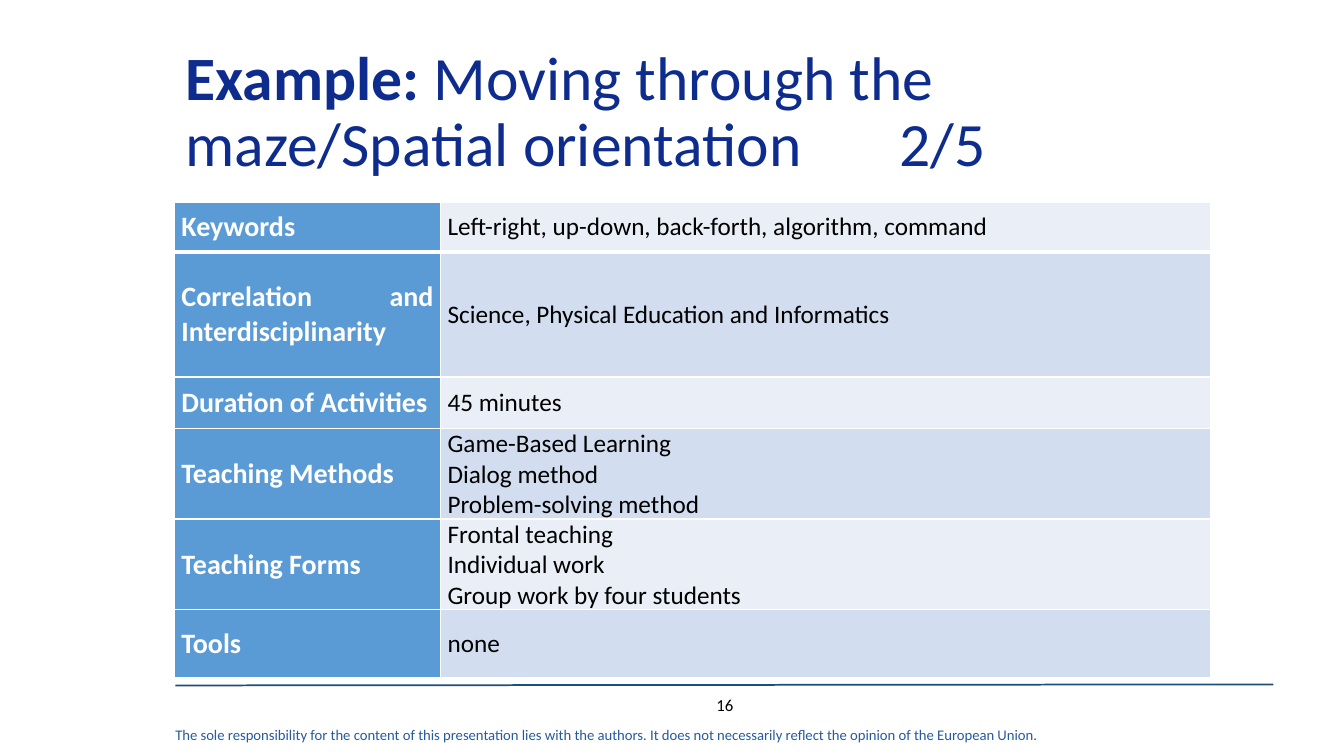
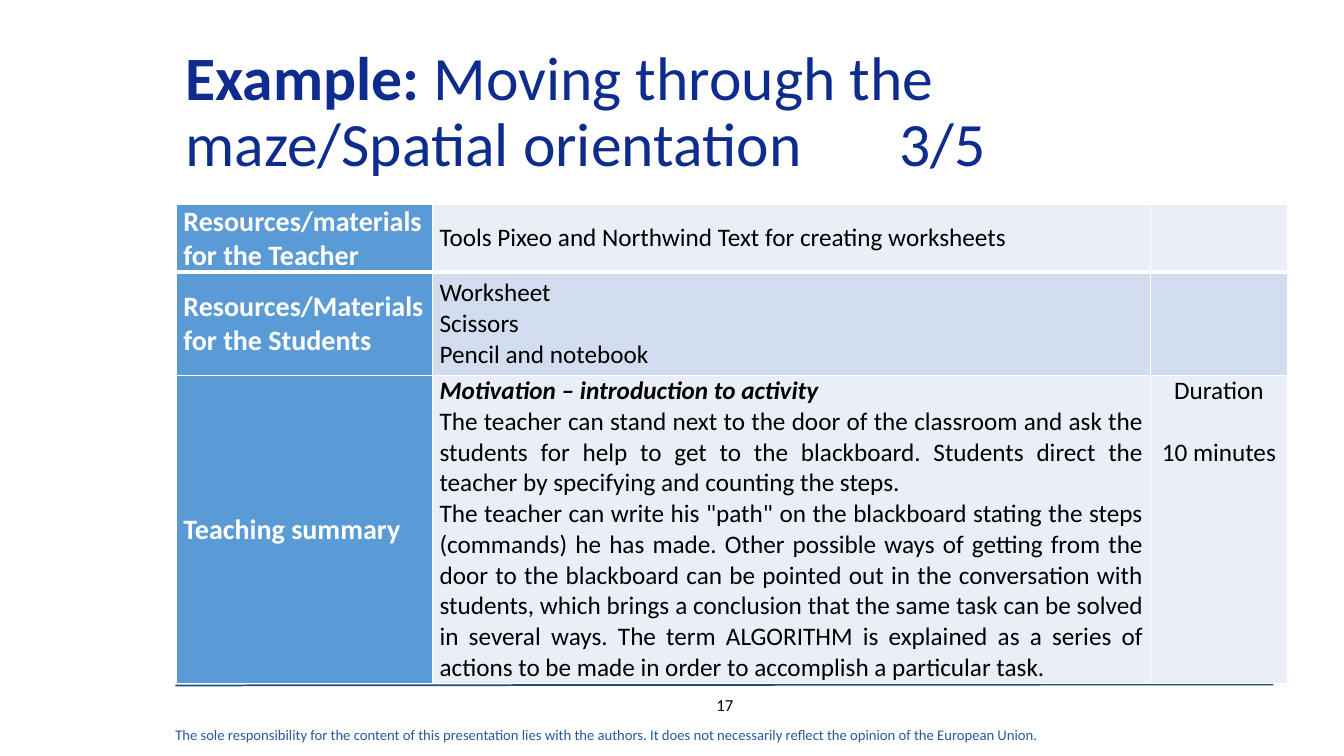
from dataclasses import dataclass

from lxml import etree
from pptx import Presentation
from pptx.dml.color import RGBColor
from pptx.enum.shapes import MSO_CONNECTOR
from pptx.enum.text import MSO_ANCHOR, MSO_AUTO_SIZE, PP_ALIGN
from pptx.oxml.ns import qn
from pptx.util import Inches, Pt

LEFT, CENTER, JUSTIFY = PP_ALIGN.LEFT, PP_ALIGN.CENTER, PP_ALIGN.JUSTIFY
MIDDLE, TOP = MSO_ANCHOR.MIDDLE, MSO_ANCHOR.TOP
NO_AUTOFIT = MSO_AUTO_SIZE.NONE
STRAIGHT = MSO_CONNECTOR.STRAIGHT


@dataclass(frozen=True)
class Theme:
    font: str = "Calibri"
    title: str = "0E2C8E"
    label_fill: str = "5B9BD5"
    bands: tuple = ("EAEFF7", "D2DEEF")
    border: str = "FFFFFF"
    label_text: str = "FFFFFF"
    text: str = "000000"
    rule: str = "1F4E79"
    disclaimer: str = "275A9F"
    title_size: float = 44
    label_size: float = 20
    body_size: float = 18
    page_size: float = 12
    disclaimer_size: float = 10.5


THEME = Theme()

# Content: a paragraph is a string or (string, format)
TITLE_LEAD = "Example: "
TITLE_TEXT = "Moving through the maze/Spatial orientation"
DISCLAIMER = ("The sole responsibility for the content of this presentation lies with the authors. "
              "It does not necessarily reflect the opinion of the European Union.")

SLIDES = [
    {
        "part": "2/5", "page": "16", "at": (1.73, 2.01), "label_align": JUSTIFY,
        "columns": [2.64, 7.64],
        "heights": [0.49, 1.24, 0.51, 0.85, 0.85, 0.67],
        "rows": [
            ("Keywords", ["Left-right, up-down, back-forth, algorithm, command"]),
            ("Correlation and Interdisciplinarity",
             ["Science, Physical Education and Informatics"]),
            ("Duration of Activities", ["45 minutes"]),
            ("Teaching Methods",
             ["Game-Based Learning", "Dialog method", "Problem-solving method"]),
            ("Teaching Forms",
             ["Frontal teaching", "Individual work", "Group work by four students"]),
            ("Tools", ["none"]),
        ],
    },
    {
        "part": "3/5", "page": "17", "at": (1.75, 2.03), "label_align": LEFT,
        "columns": [2.54, 7.12, 1.36],
        "heights": [0.62, 1.03, 3.05],
        "rows": [
            ("Resources/materials for the Teacher",
             ["Tools Pixeo and Northwind Text for creating worksheets"], []),
            ("Resources/Materials for the Students",
             ["Worksheet", "Scissors", "Pencil and notebook"], []),
            ("Teaching summary",
             [("Motivation – introduction to activity", {"bold": True, "italic": True}),
              "The teacher can stand next to the door of the classroom and ask the students "
              "for help to get to the blackboard. Students direct the teacher by specifying "
              "and counting the steps.",
              "The teacher can write his \"path\" on the blackboard stating the steps "
              "(commands) he has made. Other possible ways of getting from the door to the "
              "blackboard can be pointed out in the conversation with students, which brings "
              "a conclusion that the same task can be solved in several ways. The term "
              "ALGORITHM is explained as a series of actions to be made in order to "
              "accomplish a particular task."],
             ["Duration", ("10 minutes", {"before": 22})]),
        ],
    },
]


def write(paragraph, text, *, size, color, align=LEFT, bold=False, italic=False, before=0):
    """Append one formatted run to a paragraph."""
    paragraph.alignment = align
    paragraph.space_before = Pt(before)
    run = paragraph.add_run()
    run.text = text
    font = run.font
    font.name, font.size = THEME.font, Pt(size)
    font.bold, font.italic = bold, italic
    font.color.rgb = RGBColor.from_string(color)


def write_all(frame, paragraphs, **style):
    for index, item in enumerate(paragraphs):
        text, extra = (item, {}) if isinstance(item, str) else item
        paragraph = frame.add_paragraph() if index else frame.paragraphs[0]
        write(paragraph, text, **{**style, **extra})


def add_title(slide, part):
    title = slide.shapes.title
    title.left, title.top, title.width, title.height = map(Inches, (1.74, 0.4, 9.66, 1.45))
    frame = title.text_frame
    frame.word_wrap, frame.auto_size, frame.vertical_anchor = True, NO_AUTOFIT, MIDDLE
    paragraph = frame.paragraphs[0]
    paragraph.line_spacing = 0.9
    style = {"size": THEME.title_size, "color": THEME.title}
    write(paragraph, TITLE_LEAD, bold=True, **style)
    write(paragraph, f"{TITLE_TEXT}\t{part}", **style)
    # The part number stands at a tab stop
    stops = etree.SubElement(paragraph._p.get_or_add_pPr(), qn("a:tabLst"))
    etree.SubElement(stops, qn("a:tab"), pos=str(Inches(7.08)), algn="l")


def add_label(slide, box, text, **style):
    label = slide.shapes.add_textbox(*map(Inches, box))
    frame = label.text_frame
    frame.word_wrap, frame.vertical_anchor = True, MIDDLE
    write_all(frame, [text], **style)


def add_footer(slide, page):
    rule = slide.shapes.add_connector(STRAIGHT, *map(Inches, (1.74, 6.8, 12.63, 6.79)))
    rule.line.color.rgb = RGBColor.from_string(THEME.rule)
    rule.line.width = Pt(1.25)
    etree.SubElement(rule._element.spPr, qn("a:effectLst"))
    add_label(slide, (1.64, 7.16, 8.97, 0.26), DISCLAIMER,
              size=THEME.disclaimer_size, color=THEME.disclaimer)
    add_label(slide, (6.89, 6.79, 0.6, 0.4), page,
              size=THEME.page_size, color=THEME.text, align=CENTER)


def set_borders(cell, row):
    """White borders, with a heavier one under the first row."""
    widths = {"lnL": 1, "lnR": 1, "lnT": 3 if row == 1 else 1, "lnB": 3 if row == 0 else 1}
    properties = cell._tc.get_or_add_tcPr()
    for side, width in widths.items():
        line = etree.SubElement(properties, qn(f"a:{side}"), w=str(Pt(width)))
        fill = etree.SubElement(line, qn("a:solidFill"))
        etree.SubElement(fill, qn("a:srgbClr"), val=THEME.border)


def add_plan_table(slide, plan):
    columns, heights = plan["columns"], plan["heights"]
    size = (sum(columns), sum(heights))
    table = slide.shapes.add_table(len(heights), len(columns),
                                   *map(Inches, plan["at"] + size)).table
    table.first_row = table.horz_banding = False
    for column, width in zip(table.columns, columns):
        column.width = Inches(width)
    for row, height in zip(table.rows, heights):
        row.height = Inches(height)

    label_style = {"size": THEME.label_size, "color": THEME.label_text,
                   "bold": True, "align": plan["label_align"]}
    body_style = {"size": THEME.body_size, "color": THEME.text}
    for r, (label, *details) in enumerate(plan["rows"]):
        for c, paragraphs in enumerate([[label], *details]):
            cell = table.cell(r, c)
            cell.margin_left = cell.margin_right = Inches(0.07)
            cell.margin_top = cell.margin_bottom = 0
            cell.vertical_anchor = TOP if c == 2 else MIDDLE
            set_borders(cell, r)
            cell.fill.solid()
            color = THEME.bands[r % 2] if c else THEME.label_fill
            cell.fill.fore_color.rgb = RGBColor.from_string(color)
            style = {**body_style, "align": CENTER if c == 2 else JUSTIFY} if c else label_style
            write_all(cell.text_frame, paragraphs, **style)


def main():
    deck = Presentation()
    deck.slide_width, deck.slide_height = Inches(13.33), Inches(7.5)
    title_only = deck.slide_layouts[5]
    for plan in SLIDES:
        slide = deck.slides.add_slide(title_only)
        add_footer(slide, plan["page"])
        add_plan_table(slide, plan)
        add_title(slide, plan["part"])
    deck.save("out.pptx")


if __name__ == "__main__":
    main()
